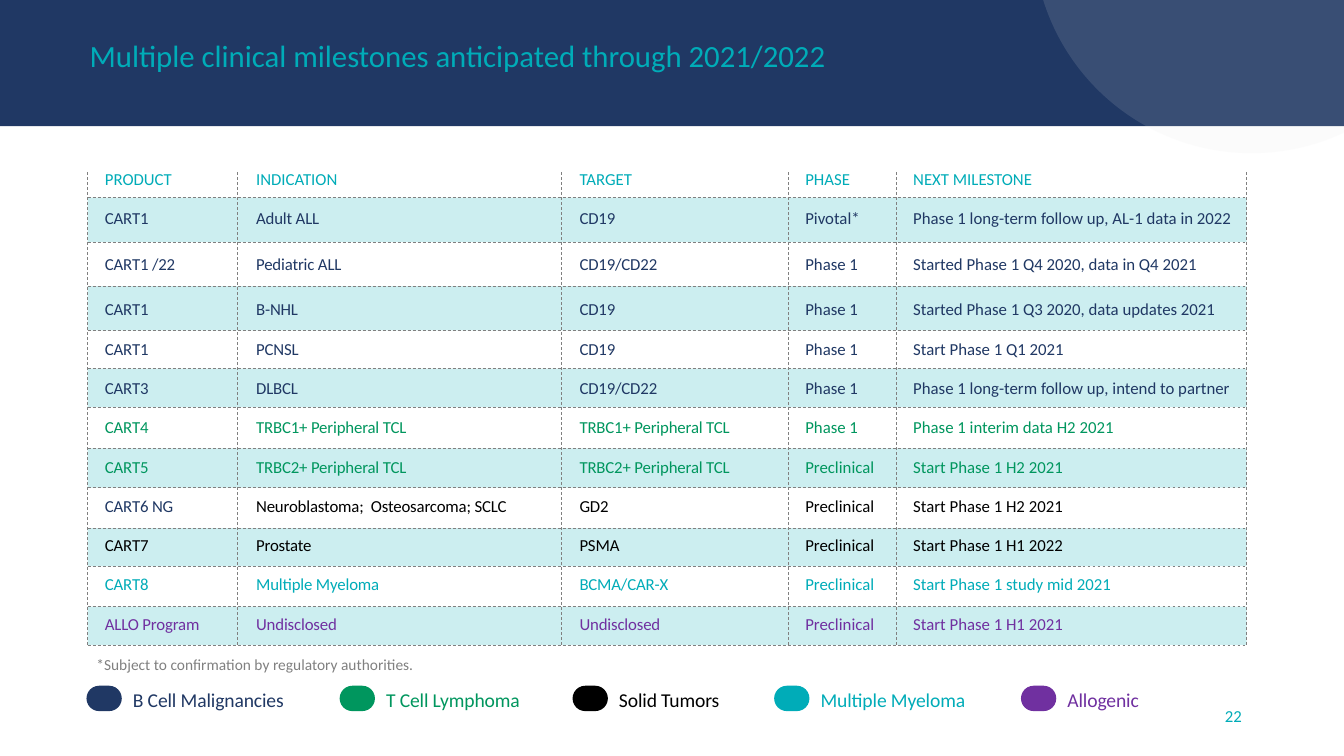
from dataclasses import dataclass
from itertools import pairwise

from lxml.etree import SubElement
from pptx import Presentation
from pptx.dml.color import RGBColor
from pptx.enum.dml import MSO_LINE_DASH_STYLE as Dash
from pptx.enum.shapes import MSO_CONNECTOR as Connector, MSO_SHAPE as Shape
from pptx.enum.text import MSO_ANCHOR as Anchor, PP_ALIGN as Align
from pptx.oxml.ns import qn
from pptx.util import Cm, Pt


@dataclass(frozen=True)
class Theme:
    """Colours and type sizes of the slide."""
    font: str = "Calibri"
    navy: str = "203864"
    teal: str = "00ACB8"
    green: str = "00965E"
    black: str = "000000"
    purple: str = "7030A0"
    grey: str = "808080"
    halo: str = "E6E6E6"
    title: float = 22
    legend: float = 14
    body: float = 12
    note: float = 11


@dataclass(frozen=True)
class Box:
    """A region of the slide, in centimetres."""
    left: float
    top: float
    width: float
    height: float


THEME = Theme()
NO_TABLE_STYLE = "{2D5ABB26-0587-4C30-8999-92F81FD0307C}"

HEADINGS = ("PRODUCT", "INDICATION", "TARGET", "PHASE", "NEXT MILESTONE")
PROGRAMS = (
    (THEME.navy, "CART1", "Adult ALL", "CD19", "Pivotal*",
     "Phase 1 long-term follow up, AL-1 data in 2022"),
    (THEME.navy, "CART1 /22", "Pediatric ALL", "CD19/CD22", "Phase 1",
     "Started Phase 1 Q4 2020, data in Q4 2021"),
    (THEME.navy, "CART1", "B-NHL", "CD19", "Phase 1",
     "Started Phase 1 Q3 2020, data updates 2021"),
    (THEME.navy, "CART1", "PCNSL", "CD19", "Phase 1", "Start Phase 1 Q1 2021"),
    (THEME.navy, "CART3", "DLBCL", "CD19/CD22", "Phase 1",
     "Phase 1 long-term follow up, intend to partner"),
    (THEME.green, "CART4", "TRBC1+ Peripheral TCL", "TRBC1+ Peripheral TCL",
     "Phase 1", "Phase 1 interim data H2 2021"),
    (THEME.green, "CART5", "TRBC2+ Peripheral TCL", "TRBC2+ Peripheral TCL",
     "Preclinical", "Start Phase 1 H2 2021"),
    (THEME.black, "CART6 NG", "Neuroblastoma;  Osteosarcoma; SCLC", "GD2",
     "Preclinical", "Start Phase 1 H2 2021"),
    (THEME.black, "CART7", "Prostate", "PSMA", "Preclinical",
     "Start Phase 1 H1 2022"),
    (THEME.teal, "CART8", "Multiple Myeloma", "BCMA/CAR-X", "Preclinical",
     "Start Phase 1 study mid 2021"),
    (THEME.purple, "ALLO Program", "Undisclosed", "Undisclosed", "Preclinical",
     "Start Phase 1 H1 2021"),
)
NAVY_PRODUCTS = {"CART6 NG"}
TIGHT_COLUMNS = {"INDICATION", "PRODUCT", "TARGET"}

COLUMN_RULES = (0, 3.78, 11.94, 17.65, 20.37, 29.21)
ROW_RULES = (0.64, 1.76, 2.87, 3.99, 4.95, 5.92, 6.96, 7.95, 8.97, 9.93, 10.95, 11.91)
COLUMN_WIDTHS = (3.81, 8.15, 5.69, 2.72, 8.97)
ROW_HEIGHT, TALL_ROW, TALL_HEIGHT = 0.99, 2, 1.3

LEGEND = (
    (0, "B Cell Malignancies", THEME.navy),
    (6.38, "T Cell Lymphoma", THEME.green),
    (12.25, "Solid Tumors", THEME.black),
    (17.33, "Multiple Myeloma", THEME.teal),
    (23.55, "Allogenic", THEME.purple),
)


def write(frame, text, size, color, tight=False):
    """Put one styled paragraph in a text frame and return it."""
    paragraph = frame.paragraphs[0]
    run = paragraph.add_run()
    run.text = text
    paragraph.font.name = THEME.font
    paragraph.font.size = Pt(size)
    paragraph.font.color.rgb = RGBColor.from_string(color)
    if tight:
        run._r.get_or_add_rPr().set("spc", "-10")
    return paragraph


def add_label(slide, box, text, size, color, tight=False, wrap=True):
    """Add a text box and return its text frame."""
    frame = slide.shapes.add_textbox(
        Cm(box.left), Cm(box.top), Cm(box.width), Cm(box.height)).text_frame
    frame.word_wrap = wrap
    write(frame, text, size, color, tight)
    return frame


def add_block(slide, kind, box, color, alpha=100):
    """Add a borderless filled shape with an opacity in percent."""
    block = slide.shapes.add_shape(
        kind, Cm(box.left), Cm(box.top), Cm(box.width), Cm(box.height))
    block.shadow.inherit = False
    block.line.fill.background()
    block.fill.solid()
    block.fill.fore_color.rgb = RGBColor.from_string(color)
    if alpha < 100:
        tint = next(block.element.spPr.iter(qn("a:srgbClr")))
        SubElement(tint, qn("a:alpha")).set("val", str(alpha * 1000))
    return block


def add_rule(slide, x1, y1, x2, y2):
    """Add a thin dashed grid line."""
    rule = slide.shapes.add_connector(
        Connector.STRAIGHT, Cm(x1), Cm(y1), Cm(x2), Cm(y2))
    rule.line.color.rgb = RGBColor.from_string(THEME.grey)
    rule.line.width = Pt(0.5)
    rule.line.dash_style = Dash.DASH
    SubElement(rule.element.spPr, qn("a:effectLst"))


def draw_header(slide, box):
    """Draw the title band with its pale circle."""
    add_block(slide, Shape.RECTANGLE, box, THEME.navy)
    halo = Box(box.left + 26.04, box.top - 7.14, 11, 11)
    add_block(slide, Shape.OVAL, halo, THEME.halo, 13)
    title = add_label(
        slide, Box(box.left + 2.01, box.top + 0.91, 25.3, 3.68),
        "Multiple clinical milestones anticipated through 2021/2022",
        THEME.title, THEME.teal)
    title.paragraphs[0].line_spacing = 0.9


def draw_grid(slide, box):
    """Draw the tinted bands and the dashed rules behind the table."""
    for top, bottom in list(pairwise(ROW_RULES))[::2]:
        band = Box(box.left, box.top + top, box.width, bottom - top)
        add_block(slide, Shape.RECTANGLE, band, THEME.teal, 20)
    for x in COLUMN_RULES:
        add_rule(slide, box.left + x, box.top + box.height, box.left + x, box.top)
    for y in ROW_RULES:
        add_rule(slide, box.left, box.top + y, box.left + box.width, box.top + y)


def draw_pipeline(slide, box):
    """Fill the table of programs."""
    holder = slide.shapes.add_table(
        len(PROGRAMS) + 1, len(HEADINGS),
        Cm(box.left), Cm(box.top), Cm(box.width), Cm(box.height))
    next(holder.element.iter(qn("a:tableStyleId"))).text = NO_TABLE_STYLE
    pipeline = holder.table
    pipeline.first_row = pipeline.horz_banding = False
    for column, width in zip(pipeline.columns, COLUMN_WIDTHS):
        column.width = Cm(width)
    for r, (color, *entries) in enumerate([(THEME.teal, *HEADINGS), *PROGRAMS]):
        pipeline.rows[r].height = Cm(TALL_HEIGHT if r == TALL_ROW else ROW_HEIGHT)
        for c, (heading, entry) in enumerate(zip(HEADINGS, entries)):
            cell = pipeline.cell(r, c)
            cell.fill.background()
            cell.vertical_anchor = Anchor.MIDDLE
            write(cell.text_frame, entry, THEME.body,
                  THEME.navy if entry in NAVY_PRODUCTS else color,
                  tight=r > 0 and heading in TIGHT_COLUMNS)


def draw_legend(slide, box):
    """Draw the colour key of disease areas."""
    for offset, area, color in LEGEND:
        left = box.left + offset
        swatch = add_block(slide, Shape.ROUNDED_RECTANGLE,
                           Box(left, box.top + 0.06, 0.89, 0.64), color)
        swatch.adjustments[0] = 0.5
        label = add_label(slide, Box(left + 0.79, box.top, 5.82, box.height),
                          area, THEME.legend, color, tight=True)
        label.margin_left = Cm(0.38)


def draw_footer(slide, box):
    """Write the footnote and the page number."""
    add_label(slide, Box(box.left, box.top, 8.76, 0.74),
              "*Subject to confirmation by regulatory authorities.",
              THEME.note, THEME.grey, wrap=False)
    page = add_label(slide, Box(box.left + box.width - 7.62, box.top + 1.27, 7.62, 1.02),
                     "22", THEME.body, THEME.teal)
    page.paragraphs[0].alignment = Align.RIGHT


def main():
    """Build the milestones slide."""
    deck = Presentation()
    deck.slide_width, deck.slide_height = Cm(33.87), Cm(19.05)
    slide = deck.slides.add_slide(deck.slide_layouts[6])
    draw_header(slide, Box(0, 0, 33.87, 3.18))
    draw_grid(slide, Box(2.21, 4.34, 29.21, 11.91))
    draw_pipeline(slide, Box(2.39, 4.04, 29.34, 12.19))
    draw_legend(slide, Box(2.18, 17.22, 29.37, 0.86))
    draw_footer(slide, Box(2.18, 16.38, 29.37, 2.29))
    deck.save("out.pptx")


if __name__ == "__main__":
    main()
